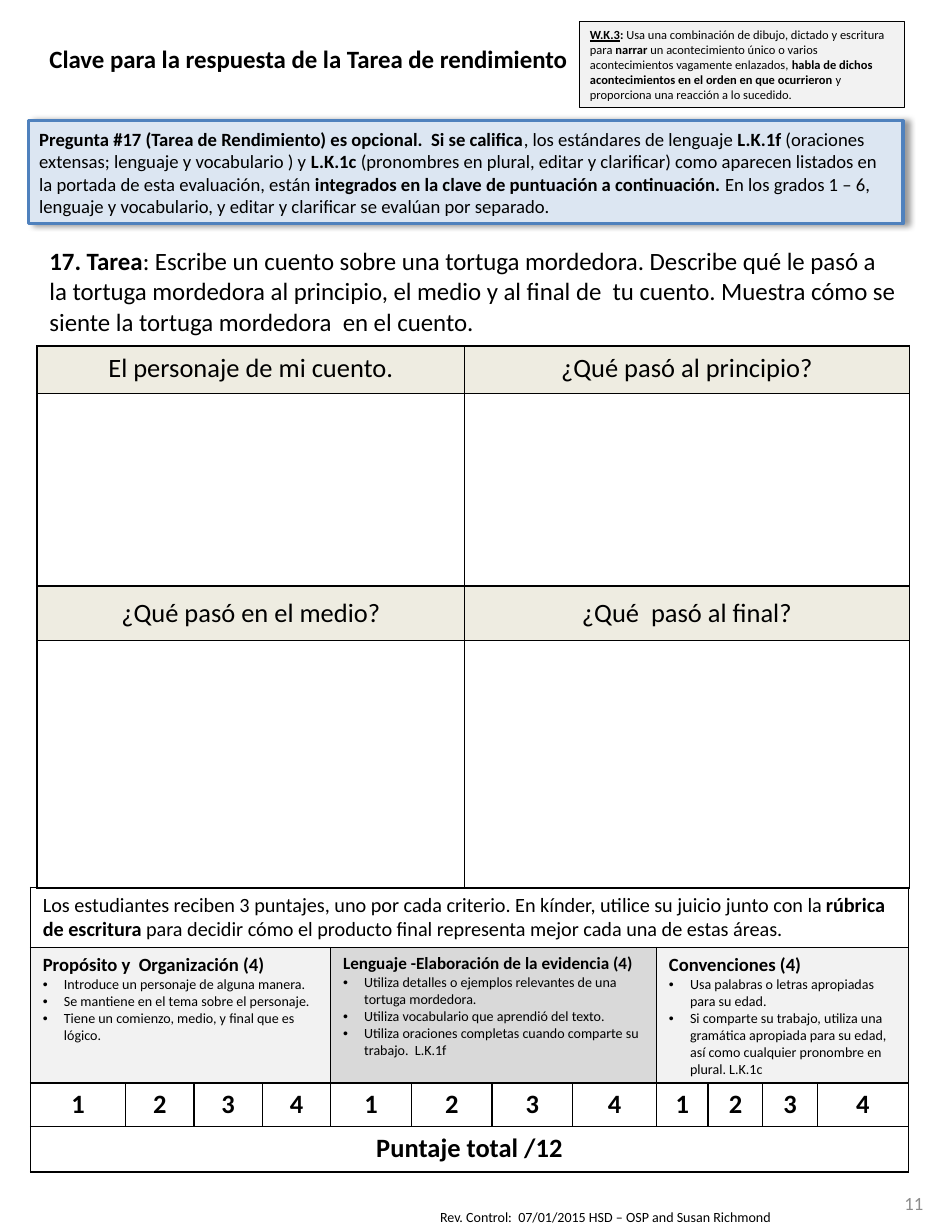
"""Build the answer key page for the kindergarten writing performance task."""
from lxml import etree
from pptx import Presentation
from pptx import util as u
from pptx.dml.color import RGBColor
from pptx.enum import shapes, text
from pptx.oxml.ns import qn

FONT = "Calibri"
BLACK = RGBColor(0x00, 0x00, 0x00)
WHITE = RGBColor(0xFF, 0xFF, 0xFF)
GRAY = RGBColor(0x8C, 0x8C, 0x8C)
PALE = RGBColor(0xF2, 0xF2, 0xF2)
SILVER = RGBColor(0xD9, 0xD9, 0xD9)
CREAM = RGBColor(0xEE, 0xEC, 0xE1)
SKY = RGBColor(0xDC, 0xE6, 0xF2)
BLUE = RGBColor(0x4F, 0x81, 0xBD)
LEFT, CENTER, RIGHT = text.PP_ALIGN.LEFT, text.PP_ALIGN.CENTER, text.PP_ALIGN.RIGHT
MIDDLE, TOP = text.MSO_ANCHOR.MIDDLE, text.MSO_ANCHOR.TOP
SIDES = ("L", "R", "T", "B")

REVISION = "Rev. Control:  07/01/2015 HSD – OSP and Susan Richmond"
PAGE_NUMBER = "11"
TITLE = "Clave para la respuesta de la Tarea de rendimiento"
TASK = [
    ("17. Tarea", "b"),
    (": Escribe un cuento sobre una tortuga mordedora. Describe qué le pasó a  la tortuga "
     "mordedora al principio, el medio y al final de  tu cuento. Muestra cómo se siente la "
     "tortuga mordedora  en el cuento.", ""),
]
STORY_HEADINGS = {
    1: (TOP, ["El personaje de mi cuento.", "¿Qué pasó al principio?"]),
    3: (MIDDLE, ["¿Qué pasó en el medio?", "¿Qué  pasó al final?"]),
}
BANNER = [
    ("Pregunta #17 (Tarea de Rendimiento) es opcional.  Si se califica", "b"),
    (", los estándares de lenguaje ", ""),
    ("L.K.1f", "b"),
    (" (oraciones extensas; lenguaje y vocabulario ) y ", ""),
    ("L.K.1c ", "b"),
    ("(pronombres en plural, editar y clarificar) como aparecen listados en la portada de "
     "esta evaluación, están", ""),
    (" integrados en la clave de puntuación a continuación. ", "b"),
    ("En los grados 1 – 6, lenguaje y vocabulario, y editar y clarificar se evalúan por "
     "separado.", ""),
]
STANDARD = [
    ("W.K.3", "bu"),
    (": ", "b"),
    ("Usa una combinación de dibujo, dictado y escritura para ", ""),
    ("narrar", "b"),
    (" un acontecimiento único o varios acontecimientos vagamente enlazados, ", ""),
    ("habla de dichos acontecimientos en el orden en que ocurrieron ", "b"),
    ("y proporciona una reacción a lo sucedido.", ""),
]
SCORING = [
    ("Los estudiantes reciben 3 puntajes, uno por cada criterio. En kínder, utilice su juicio "
     "junto con la ", ""),
    ("rúbrica de escritura ", "b"),
    ("para decidir cómo el producto final representa mejor cada una de estas áreas.", ""),
]
CRITERIA = [
    ("Propósito y  Organización (4)", 12, PALE, [
        "Introduce un personaje de alguna manera.",
        "Se mantiene en el tema sobre el personaje.",
        "Tiene un comienzo, medio, y final que es lógico."]),
    ("Lenguaje -Elaboración de la evidencia (4)", 11, SILVER, [
        "Utiliza detalles o ejemplos relevantes de una tortuga mordedora.",
        "Utiliza vocabulario que aprendió del texto.",
        "Utiliza oraciones completas cuando comparte su trabajo.  L.K.1f"]),
    ("Convenciones (4)", 12, PALE, [
        "Usa palabras o letras apropiadas para su edad.",
        "Si comparte su trabajo, utiliza una gramática apropiada para su edad, así como "
        "cualquier pronombre en plural. L.K.1c"]),
]
MAX_SCORE = 4
TOTAL = "Puntaje total /12"

STORY_COLUMNS = [9.7, 10.08]
STORY_ROWS = [6.96, 1.07, 4.37, 1.24, 5.61]
RUBRIC_COLUMNS = [2.16] + [1.55] * 3 + [1.83] * 3 + [1.9, 1.17, 1.24, 1.24, 2.06]
RUBRIC_ROWS = [1.37, 3.07, 0.97, 1.04]


def write(frame, runs, size, align=LEFT, color=BLACK):
    para = frame.paragraphs[0] if not frame.text else frame.add_paragraph()
    para.alignment = align
    for words, style in runs:
        span = para.add_run()
        span.text = words
        font = span.font
        font.name, font.size, font.color.rgb = FONT, u.Pt(size), color
        font.bold, font.underline = "b" in style, "u" in style
    return para


def add_bullet(para):
    props = para._p.get_or_add_pPr()
    indent = u.Cm(0.48)
    props.set("marL", str(indent))
    props.set("indent", str(-indent))
    etree.SubElement(props, qn("a:buFont"), typeface="Arial")
    etree.SubElement(props, qn("a:buChar"), char="•")


def set_borders(cell, visible):
    props = cell._tc.get_or_add_tcPr()
    for side in SIDES:
        line = etree.SubElement(props, qn(f"a:ln{side}"), w=str(u.Pt(1)))
        if side in visible:
            paint = etree.SubElement(line, qn("a:solidFill"))
            etree.SubElement(paint, qn("a:srgbClr"), val=str(BLACK))
        else:
            etree.SubElement(line, qn("a:noFill"))


def add_grid(page, left, top, columns, rows, open_rows=()):
    lengths = [u.Cm(value) for value in (left, top, sum(columns), sum(rows))]
    table = page.shapes.add_table(len(rows), len(columns), *lengths).table
    table.first_row = table.horz_banding = False
    for column, width in zip(table.columns, columns):
        column.width = u.Cm(width)
    for index, (row, height) in enumerate(zip(table.rows, rows)):
        row.height = u.Cm(height)
        for cell in row.cells:
            cell.margin_left = cell.margin_right = u.Cm(0.28)
            cell.margin_top = cell.margin_bottom = u.Cm(0.13)
            set_borders(cell, "B" if index in open_rows else SIDES)
            cell.fill.background()
    return table


def paint(cell, color):
    cell.fill.solid()
    cell.fill.fore_color.rgb = color


def add_label(page, area, words, size, align=LEFT, color=BLACK, anchor=TOP):
    frame = page.shapes.add_textbox(*map(u.Cm, area)).text_frame
    frame.word_wrap, frame.vertical_anchor = True, anchor
    write(frame, [(words, "")], size, align, color)


def add_panel(page, area, runs, size, fill, line, width):
    box = page.shapes.add_shape(shapes.MSO_SHAPE.RECTANGLE, *map(u.Cm, area))
    box.shadow.inherit = False
    box.fill.solid()
    box.fill.fore_color.rgb = fill
    box.line.color.rgb, box.line.width = line, u.Pt(width)
    box.text_frame.word_wrap, box.text_frame.vertical_anchor = True, MIDDLE
    write(box.text_frame, runs, size)
    return box


def add_shadow(box):
    effects = box._element.spPr.find(qn("a:effectLst"))
    shadow = etree.SubElement(effects, qn("a:outerShdw"), blurRad=str(u.Pt(4)),
                              dist=str(u.Pt(3)), dir="0", algn="l", rotWithShape="0")
    tone = etree.SubElement(shadow, qn("a:srgbClr"), val=str(BLACK))
    etree.SubElement(tone, qn("a:alpha"), val="40000")


def add_story(page):
    table = add_grid(page, 0.84, 0.89, STORY_COLUMNS, STORY_ROWS, open_rows=(0,))
    intro = table.cell(0, 0)
    intro.merge(table.cell(0, 1))
    paint(intro, WHITE)
    write(intro.text_frame, [(TITLE, "b")], 16)
    write(intro.text_frame, TASK, 16).space_before = u.Pt(110)
    for row, (anchor, headings) in STORY_HEADINGS.items():
        for column, heading in enumerate(headings):
            cell = table.cell(row, column)
            cell.vertical_anchor = anchor
            paint(cell, CREAM)
            write(cell.text_frame, [(heading, "")], 17, CENTER)


def add_rubric(page):
    table = add_grid(page, 0.69, 20.12, RUBRIC_COLUMNS, RUBRIC_ROWS)
    last = len(RUBRIC_COLUMNS) - 1
    for row in (0, 3):
        table.cell(row, 0).merge(table.cell(row, last))
    table.cell(0, 0).vertical_anchor = MIDDLE
    write(table.cell(0, 0).text_frame, SCORING, 13)
    write(table.cell(3, 0).text_frame, [(TOTAL, "b")], 17, CENTER)
    for index, (heading, size, color, points) in enumerate(CRITERIA):
        first = index * MAX_SCORE
        cell = table.cell(1, first)
        cell.merge(table.cell(1, first + MAX_SCORE - 1))
        paint(cell, color)
        write(cell.text_frame, [(heading, "b")], size)
        for point in points:
            add_bullet(write(cell.text_frame, [(point, "")], 9))
        for score in range(MAX_SCORE):
            frame = table.cell(2, first + score).text_frame
            write(frame, [(str(score + 1), "b")], 17, CENTER)


def main():
    deck = Presentation()
    deck.slide_width, deck.slide_height = u.Cm(21.59), u.Cm(27.94)
    page = deck.slides.add_slide(deck.slide_layouts[6])
    add_label(page, (9.73, 27.28, 10.8, 0.66), REVISION, 9)
    add_label(page, (18.85, 26.75, 2.34, 1.07), PAGE_NUMBER, 12, RIGHT, GRAY, MIDDLE)
    add_story(page)
    add_rubric(page)
    add_shadow(add_panel(page, (0.64, 2.74, 19.84, 2.34), BANNER, 12, SKY, BLUE, 2))
    add_panel(page, (13.13, 0.48, 7.37, 1.96), STANDARD, 8, PALE, BLACK, 0.25)
    deck.save("out.pptx")


if __name__ == "__main__":
    main()
